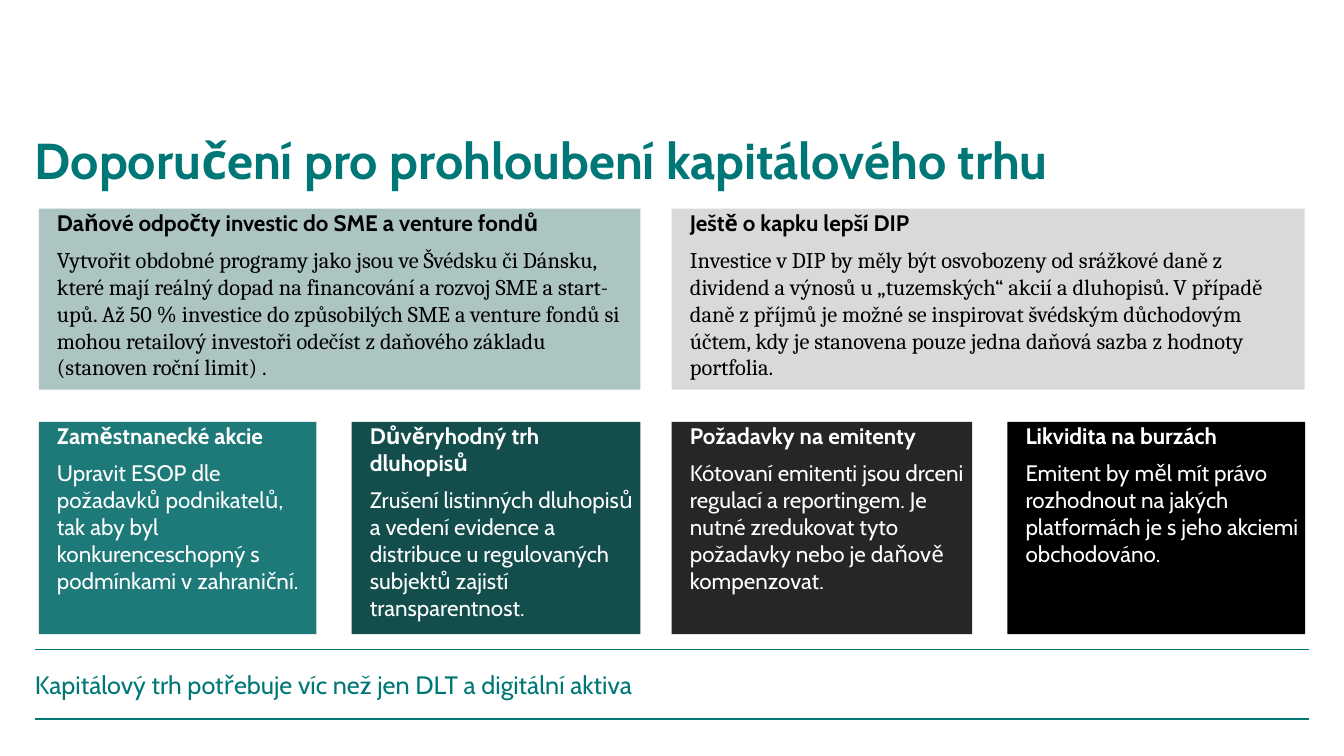
"""Build the slide with recommendations for deepening the capital market."""
from lxml import etree
from pptx import Presentation
from pptx.dml.color import RGBColor
from pptx.enum.shapes import MSO_CONNECTOR, MSO_SHAPE
from pptx.enum.text import MSO_ANCHOR, MSO_AUTO_SIZE, PP_ALIGN
from pptx.oxml.ns import qn
from pptx.util import Pt

RECT = MSO_SHAPE.RECTANGLE
LINE = MSO_CONNECTOR.STRAIGHT
TOP, MIDDLE = MSO_ANCHOR.TOP, MSO_ANCHOR.MIDDLE
FIXED = MSO_AUTO_SIZE.NONE
LEFT = PP_ALIGN.LEFT
PX = 9144
SANS, SERIF = "Cabin", "Cambria"
HEX = {"teal": "007777", "sage": "ACC4C2", "gray": "D9D9D9", "sea": "1E7A79",
       "pine": "134E4D", "coal": "262626", "black": "000000", "white": "FFFFFF"}


def color(name):
    return RGBColor.from_string(HEX[name])


def write(frame, anchor, inset, lines):
    frame.word_wrap = True
    frame.auto_size = FIXED
    frame.vertical_anchor = anchor
    frame.margin_left = inset * PX
    frame.margin_right = frame.margin_top = frame.margin_bottom = 0
    for i, (text, size, face, ink, bold) in enumerate(lines):
        para = frame.add_paragraph() if i else frame.paragraphs[0]
        para.text = text
        para.alignment = LEFT
        if i:
            para.space_before = Pt(15)
        font = para.font
        font.size, font.name, font.bold = Pt(size), face, bold
        font.color.rgb = color(ink)


deck = Presentation()
deck.slide_width, deck.slide_height = 2667 * PX, 1500 * PX
slide = deck.slides.add_slide(deck.slide_layouts[5])
shapes = slide.shapes

for y in (1427, 1289):
    rule = shapes.add_connector(LINE, 69 * PX, y * PX, 2597 * PX, y * PX)
    rule.line.color.rgb = color("teal")
    rule.line.width = Pt(2)
    etree.SubElement(rule._element.spPr, qn("a:effectLst"))

note = shapes.add_textbox(69 * PX, 1297 * PX, 2272 * PX, 122 * PX)
write(note.text_frame, MIDDLE, 0, [
    ("Kapitálový trh potřebuje víc než jen DLT a digitální aktiva", 36, SANS, "teal", False)])

title = shapes.title
title.left, title.top, title.width, title.height = 69 * PX, 270 * PX, 2528 * PX, 110 * PX
write(title.text_frame, TOP, 0, [
    ("Doporučení pro prohloubení kapitálového trhu", 72, SANS, "teal", True)])
title.text_frame.paragraphs[0].line_spacing = 0.9

rows = [
    (414, 359, SERIF, "black", [
        (77, 1194, "sage", "Daňové odpočty investic do SME a venture fondů",
         "Vytvořit obdobné programy jako jsou ve Švédsku či Dánsku, které mají reálný dopad "
         "na financování a rozvoj SME a start-upů. Až 50 % investice do způsobilých SME "
         "a venture fondů si mohou retailový investoři odečíst z daňového základu "
         "(stanoven roční limit) ."),
        (1333, 1256, "gray", "Ještě o kapku lepší DIP",
         "Investice v DIP by měly být osvobozeny od srážkové daně z dividend a výnosů "
         "u „tuzemských“ akcií a dluhopisů. V případě daně z příjmů je možné se inspirovat "
         "švédským důchodovým účtem, kdy je stanovena pouze jedna daňová sazba "
         "z hodnoty portfolia."),
    ]),
    (837, 421, SANS, "white", [
        (77, 551, "sea", "Zaměstnanecké akcie",
         "Upravit ESOP dle požadavků podnikatelů, tak aby byl konkurenceschopný "
         "s podmínkami v zahraniční."),
        (698, 573, "pine", "Důvěryhodný trh dluhopisů",
         "Zrušení listinných dluhopisů a vedení evidence a distribuce u regulovaných "
         "subjektů zajistí transparentnost."),
        (1333, 596, "coal", "Požadavky na emitenty",
         "Kótovaní emitenti jsou drceni regulací a reportingem. Je nutné zredukovat tyto "
         "požadavky nebo je daňově kompenzovat."),
        (1999, 591, "black", "Likvidita na burzách",
         "Emitent by měl mít právo rozhodnout na jakých platformách je s jeho akciemi "
         "obchodováno."),
    ]),
]
for top, high, face, ink, cards in rows:
    for left, wide, fill, head, body in cards:
        card = shapes.add_shape(RECT, left * PX, top * PX, wide * PX, high * PX)
        card.shadow.inherit = False
        card.fill.solid()
        card.fill.fore_color.rgb = color(fill)
        card.line.fill.background()
        write(card.text_frame, TOP, 36, [
            (head, 32, SANS, ink, True), (body, 32, face, ink, False)])

deck.save("out.pptx")
